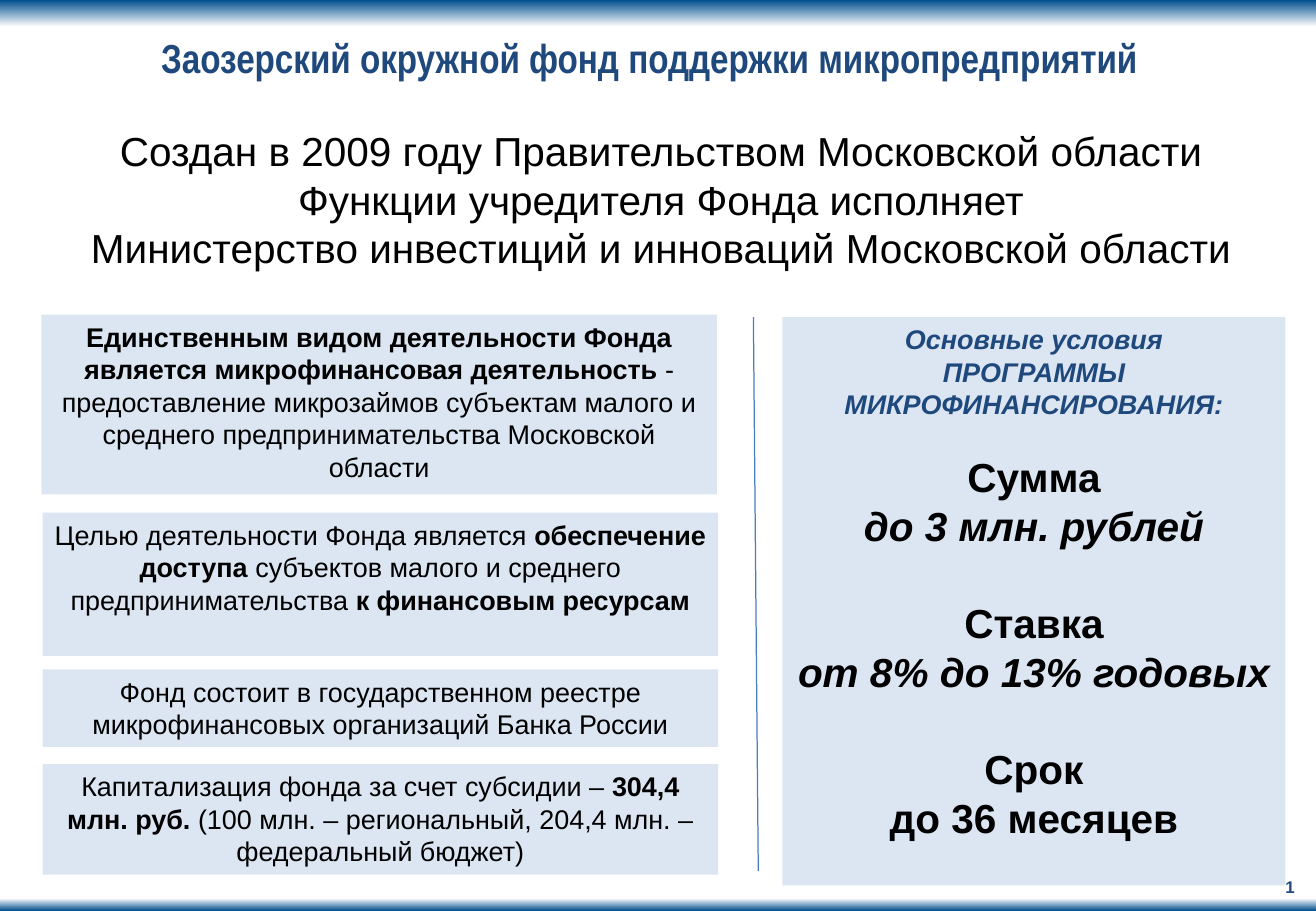
from dataclasses import dataclass

from lxml.etree import SubElement
from pptx import Presentation
from pptx.dml.color import RGBColor
from pptx.enum.shapes import MSO_CONNECTOR, MSO_SHAPE
from pptx.enum.text import MSO_ANCHOR, MSO_AUTO_SIZE, PP_ALIGN
from pptx.oxml.ns import qn
from pptx.util import Inches, Pt

WIDTH, HEIGHT = Inches(10.83), Inches(7.5)
COLUMNS = ROWS = 100
NAVY, BAND_BLUE, PALE, BLACK, WHITE = "1F497D", "004E8E", "DCE6F2", "000000", "FFFFFF"
LINE_BLUE = "4B7EBC"


@dataclass
class Area:
    left: float
    top: float
    width: float
    height: float

    def emu(self) -> tuple:
        return column(self.left), row(self.top), column(self.width), row(self.height)


@dataclass
class Span:
    text: str
    bold: bool = False


@dataclass
class Line:
    spans: list[Span]
    size: float = 16
    color: str = BLACK
    italic: bool = False
    before: float = 0
    font: str = "Arial"


@dataclass
class Panel:
    area: Area
    lines: list[Line]


@dataclass
class Band:
    area: Area
    angle: float


def column(count: float) -> int:
    return int(WIDTH * count / COLUMNS)


def row(count: float) -> int:
    return int(HEIGHT * count / ROWS)


def rgb(value: str) -> RGBColor:
    return RGBColor.from_string(value)


def write(frame, lines: list[Line], align=PP_ALIGN.CENTER, anchor=MSO_ANCHOR.TOP, wrap: bool = True) -> None:
    frame.word_wrap = wrap
    frame.auto_size = MSO_AUTO_SIZE.NONE
    frame.vertical_anchor = anchor
    for index, line in enumerate(lines):
        para = frame.add_paragraph() if index else frame.paragraphs[0]
        para.alignment = align
        if line.before:
            para.space_before = Pt(line.before)
        for span in line.spans:
            run = para.add_run()
            run.text = span.text
            run.font.name = line.font
            run.font.size = Pt(line.size)
            run.font.bold = span.bold
            run.font.italic = line.italic
            run.font.color.rgb = rgb(line.color)


def add_rectangle(page, area: Area):
    box = page.shapes.add_shape(MSO_SHAPE.RECTANGLE, *area.emu())
    box.shadow.inherit = False
    box.line.fill.background()
    return box


def add_band(page, band: Band) -> None:
    fill = add_rectangle(page, band.area).fill
    fill.gradient()
    fill.gradient_angle = band.angle
    for stop, color, position in zip(fill.gradient_stops, (BAND_BLUE, WHITE), (0, 1)):
        stop.color.rgb = rgb(color)
        stop.position = position


def add_panel(page, panel: Panel) -> None:
    box = add_rectangle(page, panel.area)
    box.fill.solid()
    box.fill.fore_color.rgb = rgb(PALE)
    write(box.text_frame, panel.lines)


def add_text(page, area: Area, lines: list[Line], **layout) -> None:
    write(page.shapes.add_textbox(*area.emu()).text_frame, lines, **layout)


def add_title(page, area: Area, line: Line) -> None:
    title = page.shapes.title
    title.left, title.top, title.width, title.height = area.emu()
    frame = title.text_frame
    frame.margin_left = frame.margin_right = frame.margin_top = frame.margin_bottom = 0
    write(frame, [line], anchor=MSO_ANCHOR.MIDDLE)


def add_divider(page) -> None:
    divider = page.shapes.add_connector(
        MSO_CONNECTOR.STRAIGHT, column(57.25), row(34.8), column(57.62), row(95.6))
    divider.line.color.rgb = rgb(LINE_BLUE)
    divider.line.width = Pt(0.75)
    SubElement(divider._element.spPr, qn("a:effectLst"))


def term(text: str, **style) -> Line:
    return Line([Span(text, bold=True)], **style)


BANDS = [
    Band(Area(0, 98.6, 100, 1.4), 90),
    Band(Area(0, 0, 100, 2.93), 270),
]

FOUNDING = [Line([Span(text)], size=24) for text in (
    "Создан в 2009 году Правительством Московской области",
    "Функции учредителя Фонда исполняет",
    "Министерство инвестиций и инноваций Московской области",
)]

PANELS = [
    Panel(Area(59.46, 34.8, 38.23, 62.4), [
        term("Основные условия", color=NAVY, italic=True),
        term("ПРОГРАММЫ МИКРОФИНАНСИРОВАНИЯ:", color=NAVY, italic=True),
        term("Сумма", size=24, before=19),
        term("до 3 млн. рублей", size=24, italic=True),
        term("Ставка", size=24, before=29),
        term("от 8% до 13% годовых", size=24, italic=True),
        term("Срок", size=24, before=29),
        term("до 36 месяцев", size=24),
    ]),
    Panel(Area(3.14, 34.53, 51.34, 19.73), [Line([
        Span("Единственным видом деятельности Фонда является микрофинансовая деятельность ", True),
        Span("- предоставление микрозаймов субъектам малого и среднего "
             "предпринимательства Московской области"),
    ])]),
    Panel(Area(3.23, 56.27, 51.34, 15.73), [Line([
        Span("Целью деятельности Фонда является "),
        Span("обеспечение доступа ", True),
        Span("субъектов малого и среднего предпринимательства "),
        Span("к финансовым ресурсам", True),
    ])]),
    Panel(Area(3.23, 73.47, 51.34, 8.53), [Line([
        Span("Фонд состоит в государственном реестре микрофинансовых организаций Банка России"),
    ])]),
    Panel(Area(3.23, 83.87, 51.34, 12.13), [Line([
        Span("Капитализация фонда за счет субсидии – "),
        Span("304,4 млн. руб.", True),
        Span(" (100 млн. – региональный, 204,4 млн. –федеральный бюджет)"),
    ])]),
]


def main() -> None:
    deck = Presentation()
    deck.slide_width, deck.slide_height = WIDTH, HEIGHT
    page = deck.slides.add_slide(deck.slide_layouts[5])
    for band in BANDS:
        add_band(page, band)
    add_title(page, Area(2.68, 3.6, 93.35, 5.33), term(
        "Заозерский окружной фонд поддержки микропредприятий",
        size=24, color=NAVY, font="Arial Narrow"))
    add_text(page, Area(3.51, 13.2, 93.44, 17.47), FOUNDING)
    for panel in PANELS:
        add_panel(page, panel)
    add_divider(page)
    add_text(page, Area(96.77, 95.6, 2.59, 3.6), [term("1", size=10, color=NAVY)],
             align=PP_ALIGN.LEFT, wrap=False)
    deck.save("out.pptx")


if __name__ == "__main__":
    main()
